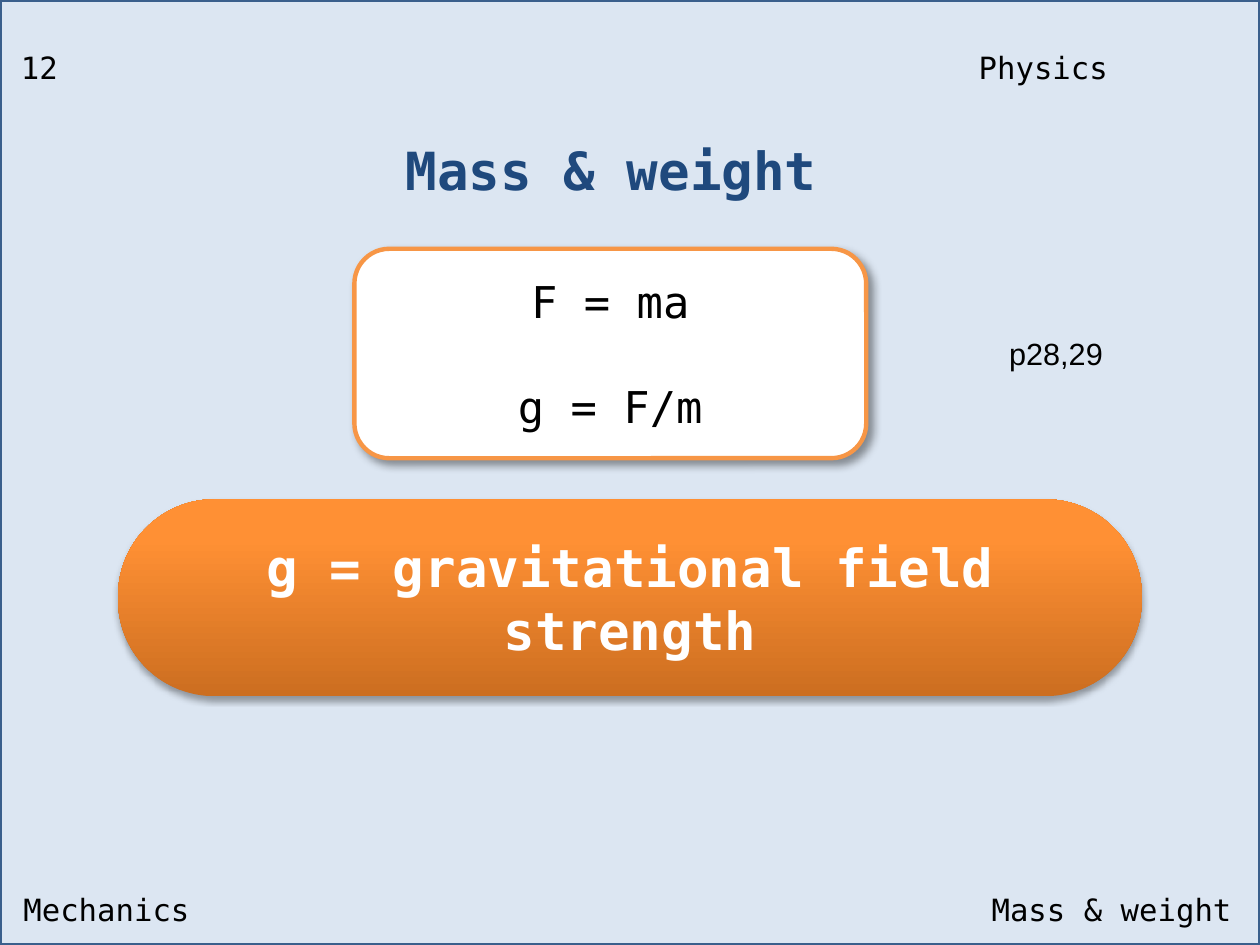
from dataclasses import dataclass

from lxml.etree import SubElement
from pptx import Presentation
from pptx.dml.color import RGBColor
from pptx.enum.shapes import MSO_SHAPE
from pptx.enum.text import MSO_ANCHOR, MSO_AUTO_SIZE, PP_ALIGN
from pptx.oxml.ns import qn
from pptx.util import Inches, Pt


@dataclass(frozen=True)
class Theme:
    mono: str = "DejaVu Sans Mono"
    sans: str = "Arial"
    background: str = "DCE6F2"
    frame: str = "3A5F8C"
    title: str = "1F497D"
    text: str = "000000"
    white: str = "FFFFFF"
    orange: str = "F79646"
    pill_gradient: tuple = ((0, "CC6E20"), (80, "FF9034"), (100, "FF9136"))
    label_size: int = 14
    formula_size: int = 20
    heading_size: int = 24
    line_width: int = 2


THEME = Theme()


def add_run(paragraph, text, size, color=THEME.text, bold=False, font=THEME.mono):
    run = paragraph.add_run()
    run.text = text
    run.font.name = font
    run.font.size = Pt(size)
    run.font.bold = bold
    run.font.color.rgb = RGBColor.from_string(color)


def add_label(slide, box, text, align=PP_ALIGN.CENTER, size=THEME.label_size, **style):
    shape = slide.shapes.add_textbox(*map(Inches, box))
    frame = shape.text_frame
    frame.word_wrap = True
    frame.auto_size = MSO_AUTO_SIZE.SHAPE_TO_FIT_TEXT
    paragraph = frame.paragraphs[0]
    paragraph.alignment = align
    add_run(paragraph, text, size, **style)


def add_panel(slide, box, kind, fill=None, line=None):
    shape = slide.shapes.add_shape(kind, *map(Inches, box))
    shape.shadow.inherit = False
    if fill:
        shape.fill.solid()
        shape.fill.fore_color.rgb = RGBColor.from_string(fill)
    if line:
        shape.line.color.rgb = RGBColor.from_string(line)
        shape.line.width = Pt(THEME.line_width)
    else:
        shape.line.fill.background()
    shape.text_frame.word_wrap = True
    shape.text_frame.vertical_anchor = MSO_ANCHOR.MIDDLE
    return shape


def add_color(parent, color):
    return SubElement(parent, qn("a:srgbClr"), val=color)


def add_shadow(shape, opacity, blur, distance, angle):
    """Cast a black shadow: opacity in percent, lengths in points, angle in degrees."""
    effects = shape._element.spPr.find(qn("a:effectLst"))
    shadow = SubElement(effects, qn("a:outerShdw"), blurRad=str(Pt(blur)),
                        dist=str(Pt(distance)), dir=str(angle * 60000), rotWithShape="0")
    SubElement(add_color(shadow, "000000"), qn("a:alpha"), val=str(opacity * 1000))


def fill_gradient(shape, stops):
    """Fill from bottom to top with (percent, color) stops."""
    shape.fill.gradient()
    shape.fill.gradient_angle = 90
    stop_list = shape._element.spPr.find(".//" + qn("a:gsLst"))
    for stop in list(stop_list):
        stop_list.remove(stop)
    for percent, color in stops:
        add_color(SubElement(stop_list, qn("a:gs"), pos=str(percent * 1000)), color)


def add_background(slide, box):
    """Framed page with the running labels in its corners."""
    left, top, width, height = box
    add_panel(slide, box, MSO_SHAPE.RECTANGLE, THEME.background, THEME.frame)
    header, footer = top + 0.26, top + height - 0.39
    add_label(slide, (left, header, 0.5, 0.34), "12")
    add_label(slide, (left + width - 2.5, header, 2.25, 0.34), "Physics")
    add_label(slide, (left + 0.05, footer, 2.25, 0.34), "Mechanics", PP_ALIGN.LEFT)
    add_label(slide, (left + width - 4.5, footer, 4.42, 0.34), "Mass & weight", PP_ALIGN.RIGHT)


def add_formula_card(slide, box, formulas):
    card = add_panel(slide, box, MSO_SHAPE.ROUNDED_RECTANGLE, THEME.white, THEME.orange)
    add_shadow(card, 40, 4, 3, 45)
    frame = card.text_frame
    for index, formula in enumerate(formulas):
        paragraph = frame.add_paragraph() if index else frame.paragraphs[0]
        paragraph.alignment = PP_ALIGN.CENTER
        if index:
            paragraph.space_before = Pt(24)
        add_run(paragraph, formula, THEME.formula_size)


def add_definition_pill(slide, box, definition):
    pill = add_panel(slide, box, MSO_SHAPE.ROUNDED_RECTANGLE)
    pill.adjustments[0] = 0.49
    fill_gradient(pill, THEME.pill_gradient)
    add_shadow(pill, 35, 3.1, 1.8, 90)
    paragraph = pill.text_frame.paragraphs[0]
    paragraph.alignment = PP_ALIGN.CENTER
    add_run(paragraph, definition, THEME.heading_size, THEME.white, bold=True)


def main():
    presentation = Presentation()
    presentation.slide_width, presentation.slide_height = Inches(8), Inches(6)
    slide = presentation.slides.add_slide(presentation.slide_layouts[6])
    add_background(slide, (0, 0, 8, 6))
    add_label(slide, (1.67, 0.83, 4.42, 0.5), "Mass & weight",
              size=THEME.heading_size, color=THEME.title, bold=True)
    add_definition_pill(slide, (0.75, 3.17, 6.5, 1.25), "g = gravitational field strength")
    add_formula_card(slide, (2.25, 1.58, 3.25, 1.33), ("F = ma", "g = F/m"))
    add_label(slide, (5.58, 2.08, 2.25, 0.34), "p28,29", font=THEME.sans)
    presentation.save("out.pptx")


if __name__ == "__main__":
    main()
